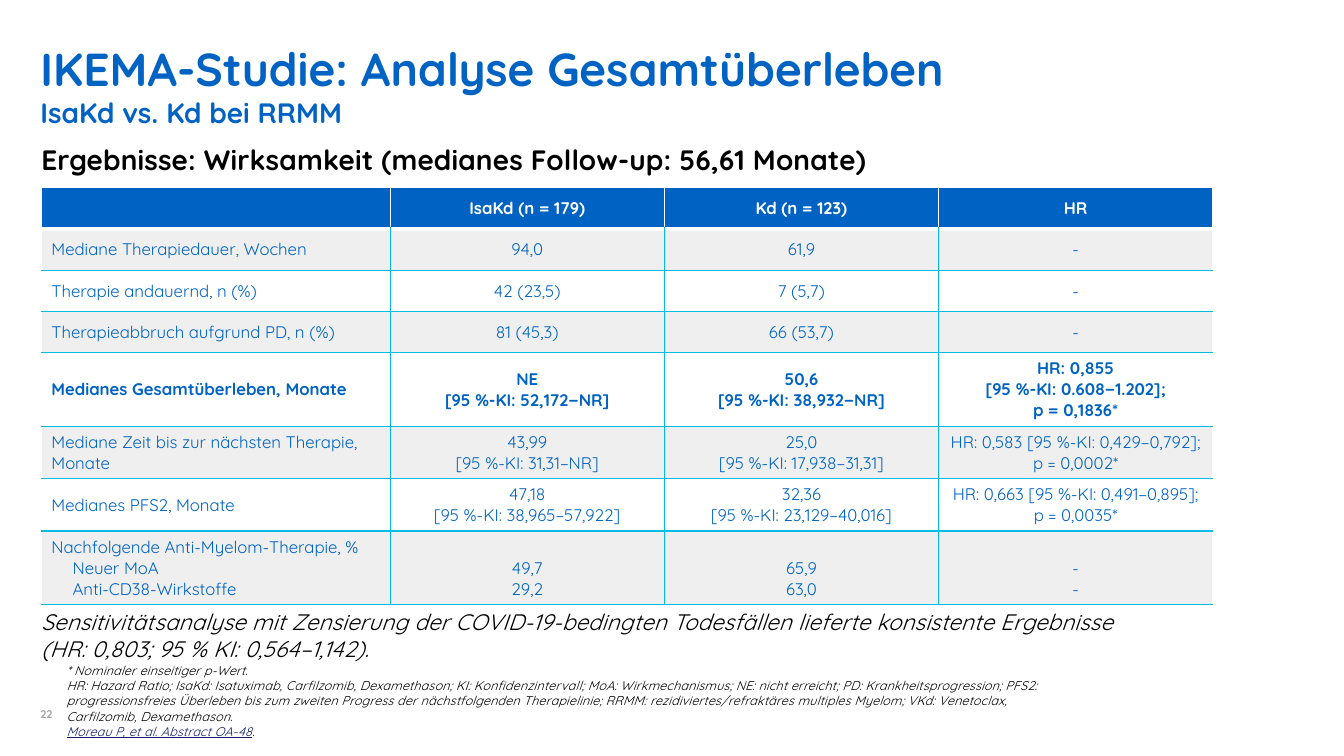
from lxml import etree
from pptx import Presentation
from pptx import util as u
from pptx.dml.color import RGBColor
from pptx.enum import text
from pptx.oxml.ns import qn

# Content
TITLE = "IKEMA-Studie: Analyse Gesamtüberleben\nIsaKd vs. Kd bei RRMM"
HEADING = "Ergebnisse: Wirksamkeit (medianes Follow-up: 56,61 Monate)"
HEADER = ("", "IsaKd (n = 179)", "Kd (n = 123)", "HR")
ROWS = [
    ("Mediane Therapiedauer, Wochen", "94,0", "61,9", "-"),
    ("Therapie andauernd, n (%)", "42 (23,5)", "7 (5,7)", "-"),
    ("Therapieabbruch aufgrund PD, n (%)", "81 (45,3)", "66 (53,7)", "-"),
    ("Medianes Gesamtüberleben, Monate",
     "NE\n[95 %-KI: 52,172−NR]",
     "50,6\n[95 %-KI: 38,932−NR]",
     "HR: 0,855\n[95 %-KI: 0.608−1.202];\np = 0,1836*"),
    ("Mediane Zeit bis zur nächsten Therapie, Monate",
     "43,99\n[95 %-KI: 31,31−NR]",
     "25,0\n[95 %-KI: 17,938−31,31]",
     "HR: 0,583 [95 %-KI: 0,429−0,792];\np = 0,0002*"),
    ("Medianes PFS2, Monate",
     "47,18\n[95 %-KI: 38,965−57,922]",
     "32,36\n[95 %-KI: 23,129−40,016]",
     "HR: 0,663 [95 %-KI: 0,491−0,895];\np = 0,0035*"),
    ("Nachfolgende Anti-Myelom-Therapie, %\nNeuer MoA\nAnti-CD38-Wirkstoffe",
     "49,7\n29,2", "65,9\n63,0", "-\n-"),
]
SENSITIVITY = ("Sensitivitätsanalyse mit Zensierung der COVID-19-bedingten Todesfällen "
               "lieferte konsistente Ergebnisse\n(HR: 0,803; 95 % KI: 0,564−1,142).")
FOOTNOTES = (
    "* Nominaler einseitiger p-Wert.\n"
    "HR: Hazard Ratio; IsaKd: Isatuximab, Carfilzomib, Dexamethason; KI: Konfidenzintervall; "
    "MoA: Wirkmechanismus; NE: nicht erreicht; PD: Krankheitsprogression; PFS2: "
    "progressionsfreies Überleben bis zum zweiten Progress der nächstfolgenden Therapielinie; "
    "RRMM: rezidiviertes/refraktäres multiples Myelom; VKd: Venetoclax, Carfilzomib, "
    "Dexamethason.\n"
    "Moreau P, et al. Abstract OA-48")
PAGE_NUMBER = "22"

# Style
FONT = "Quicksand"
BLUE, CYAN, GREY, WHITE, BLACK = "0063C3", "00BCE3", "EFEFEF", "FFFFFF", "000000"
LINK, PALE = "151F6D", "A6A6A6"
COLUMN_WIDTHS = (3.46, 2.72, 2.72, 2.72)
ROW_HEIGHTS = (0.41, 0.41, 0.41, 0.41, 0.73, 0.52, 0.52, 0.73)
KEY_ROW = 4
LAST_ROW = len(ROWS)
TOP, MIDDLE, BOTTOM = (text.MSO_ANCHOR.TOP, text.MSO_ANCHOR.MIDDLE,
                       text.MSO_ANCHOR.BOTTOM)


def color(value):
    return RGBColor.from_string(value)


def format_span(span, size, ink, bold=False, italic=False, spacing=0):
    font = span.font
    font.name, font.size = FONT, u.Pt(size)
    font.bold, font.italic = bold, italic
    font.color.rgb = color(ink)
    if spacing:
        span._r.get_or_add_rPr().set("spc", str(round(spacing * 100)))


def write(frame, content, size, ink, align=text.PP_ALIGN.LEFT, **style):
    frame.text = content
    for para in frame.paragraphs:
        para.alignment = align
        for span in para.runs:
            format_span(span, size, ink, **style)


def set_frame(frame, anchor):
    frame.word_wrap = True
    frame.auto_size = text.MSO_AUTO_SIZE.NONE
    frame.vertical_anchor = anchor
    frame.margin_left = frame.margin_right = 0
    frame.margin_top = frame.margin_bottom = 0


def add_text(page, area, content, size, ink, anchor=TOP, **style):
    box = page.shapes.add_textbox(*(u.Inches(value) for value in area))
    set_frame(box.text_frame, anchor)
    write(box.text_frame, content, size, ink, **style)
    return box.text_frame


def set_borders(cell, borders):
    """Take (side, colour, points) in the order L, R, T, B."""
    properties = cell._tc.get_or_add_tcPr()
    for index, (side, ink, points) in enumerate(borders):
        line = etree.Element(qn(f"a:ln{side}"), w=str(u.Pt(points)))
        fill = etree.SubElement(line, qn("a:solidFill"))
        etree.SubElement(fill, qn("a:srgbClr"), val=ink)
        properties.insert(index, line)


def format_cell(cell, row, column, content):
    header = row == 0
    last_column = column == len(HEADER) - 1
    cell.fill.solid()
    cell.fill.fore_color.rgb = color(BLUE if header else GREY if row % 2 else WHITE)
    cell.vertical_anchor = BOTTOM if row == LAST_ROW else MIDDLE
    align = text.PP_ALIGN.LEFT if column == 0 else text.PP_ALIGN.CENTER
    write(cell.text_frame, content, 12, WHITE if header else BLUE, align,
          bold=row in (0, KEY_ROW))

    inner = WHITE if header else CYAN
    borders = [
        ("L", WHITE if column == 0 else inner, 1),
        ("R", WHITE if last_column else inner, 1),
        ("T", WHITE if row <= 1 else CYAN, 3 if row == 1 else 1),
        ("B", inner, 3 if header else 1),
    ]
    set_borders(cell, borders)


def add_results(page):
    frame = page.shapes.add_table(
        len(ROW_HEIGHTS), len(COLUMN_WIDTHS), u.Inches(0.41), u.Inches(1.86),
        u.Inches(sum(COLUMN_WIDTHS)), u.Inches(sum(ROW_HEIGHTS)))
    table = frame.table
    table.horz_banding = False
    for column, width in zip(table.columns, COLUMN_WIDTHS):
        column.width = u.Inches(width)
    for row, height in zip(table.rows, ROW_HEIGHTS):
        row.height = u.Inches(height)
    for row, contents in enumerate([HEADER, *ROWS]):
        for column, content in enumerate(contents):
            format_cell(table.cell(row, column), row, column, content)
    # Indented sub-items in the last label
    for para in table.cell(LAST_ROW, 0).text_frame.paragraphs[1:]:
        para._p.get_or_add_pPr().set("marL", str(u.Inches(0.21)))


def main():
    deck = Presentation()
    deck.slide_width, deck.slide_height = u.Inches(13.33), u.Inches(7.5)
    page = deck.slides.add_slide(deck.slide_layouts[5])

    # Title and subtitle
    title = page.shapes.title
    title.left, title.top = u.Inches(0.4), u.Inches(0.4)
    title.width, title.height = u.Inches(12.53), u.Inches(0.89)
    set_frame(title.text_frame, TOP)
    write(title.text_frame, TITLE, 33, BLUE, bold=True)
    title.text_frame.paragraphs[1].runs[0].font.size = u.Pt(20)

    # Heading and results table
    add_text(page, (0.41, 1.41, 12.53, 4.5), HEADING, 20, BLACK, bold=True, spacing=0.1)
    add_results(page)

    # Sensitivity statement
    statement = add_text(page, (0.41, 5.99, 11.8, 0.74), SENSITIVITY, 16, BLACK,
                         BOTTOM, italic=True, spacing=0.1)
    statement.margin_bottom = u.Inches(0.16)

    # Footnotes with underlined citation
    notes = add_text(page, (0.66, 6.79, 9.75, 0.54), FOOTNOTES, 9, BLACK,
                     BOTTOM, italic=True, spacing=0.1)
    citation = notes.paragraphs[-1]
    citation.runs[0].font.underline = True
    citation.runs[0].font.color.rgb = color(LINK)
    stop = citation.add_run()
    stop.text = "."
    format_span(stop, 9, BLACK, italic=True, spacing=0.1)

    # Page number
    add_text(page, (0.4, 6.92, 0.45, 0.23), PAGE_NUMBER, 8, PALE, BOTTOM, bold=True)

    deck.save("out.pptx")


if __name__ == "__main__":
    main()
